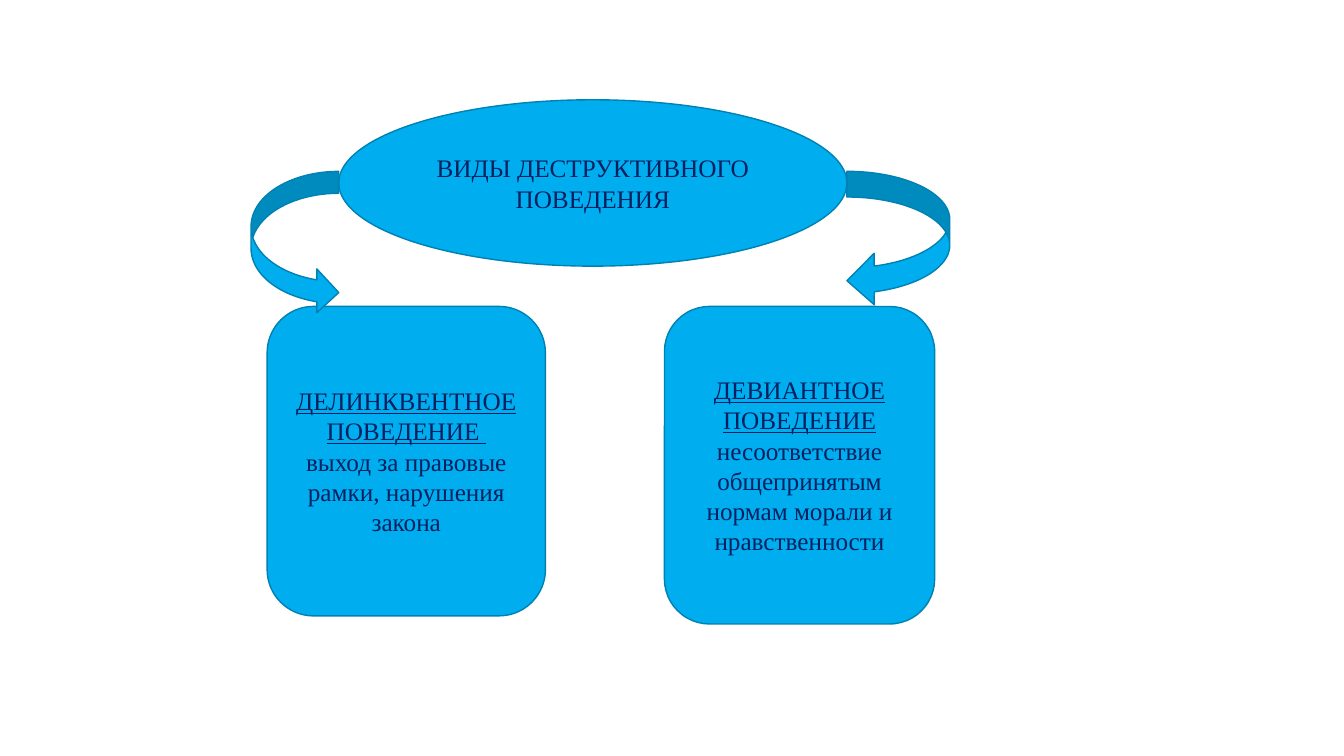
from dataclasses import dataclass

import pptx
import pptx.dml.color
import pptx.enum.shapes
import pptx.enum.text
import pptx.util

PX = 9144  # EMU per px, 100 px to the inch
SKY = pptx.dml.color.RGBColor(0x00, 0xAE, 0xEF)
OUTLINE = pptx.dml.color.RGBColor(0x00, 0x81, 0xB1)
NAVY = pptx.dml.color.RGBColor(0x00, 0x20, 0x60)
FONT = "Times New Roman"
PRESET = pptx.enum.shapes.MSO_SHAPE


@dataclass(frozen=True)
class Phrase:
    text: str
    underline: bool = False


@dataclass(frozen=True)
class Figure:
    preset: pptx.enum.shapes.MSO_SHAPE
    left: int
    top: int
    width: int
    height: int
    paragraphs: tuple[tuple[Phrase, ...], ...] = ()
    adjustments: tuple[float, ...] = ()


FIGURES = (
    # Topic
    Figure(PRESET.OVAL, 336, 99, 504, 165,
           ((Phrase("ВИДЫ ДЕСТРУКТИВНОГО ПОВЕДЕНИЯ"),),)),
    # Kinds of behaviour
    Figure(PRESET.ROUNDED_RECTANGLE, 265, 304, 276, 307,
           ((Phrase("ДЕЛИНКВЕНТНОЕ ПОВЕДЕНИЕ ", True),),
            (Phrase("выход за правовые рамки, нарушения закона"),))),
    Figure(PRESET.ROUNDED_RECTANGLE, 659, 304, 268, 315,
           ((Phrase("ДЕВИАНТНОЕ ПОВЕДЕНИЕ ", True),
             Phrase("несоответствие общепринятым нормам морали и нравственности")),)),
    # Arrows from the topic to its kinds
    Figure(PRESET.CURVED_LEFT_ARROW, 840, 170, 102, 134, adjustments=(0.25, 0.5, 0.265)),
    Figure(PRESET.CURVED_RIGHT_ARROW, 249, 170, 87, 142),
)


def write_paragraphs(frame: pptx.text.text.TextFrame,
                     paragraphs: tuple[tuple[Phrase, ...], ...]) -> None:
    frame.word_wrap = True
    frame.vertical_anchor = pptx.enum.text.MSO_ANCHOR.MIDDLE
    for index, phrases in enumerate(paragraphs):
        paragraph = frame.add_paragraph() if index else frame.paragraphs[0]
        paragraph.alignment = pptx.enum.text.PP_ALIGN.CENTER
        for phrase in phrases:
            run = paragraph.add_run()
            run.text = phrase.text
            run.font.name = FONT
            run.font.size = pptx.util.Pt(18)
            run.font.color.rgb = NAVY
            run.font.underline = phrase.underline


def draw_figure(slide: pptx.slide.Slide, figure: Figure) -> None:
    shape = slide.shapes.add_shape(figure.preset, figure.left * PX, figure.top * PX,
                                   figure.width * PX, figure.height * PX)
    shape.shadow.inherit = False
    shape.fill.solid()
    shape.fill.fore_color.rgb = SKY
    shape.line.color.rgb = OUTLINE
    shape.line.width = pptx.util.Pt(1)
    for index, value in enumerate(figure.adjustments):
        shape.adjustments[index] = value
    if figure.paragraphs:
        write_paragraphs(shape.text_frame, figure.paragraphs)


def main() -> None:
    deck = pptx.Presentation()
    deck.slide_width = 1333 * PX
    deck.slide_height = 750 * PX
    slide = deck.slides.add_slide(deck.slide_layouts[6])
    for figure in FIGURES:
        draw_figure(slide, figure)
    deck.save("out.pptx")


if __name__ == "__main__":
    main()
